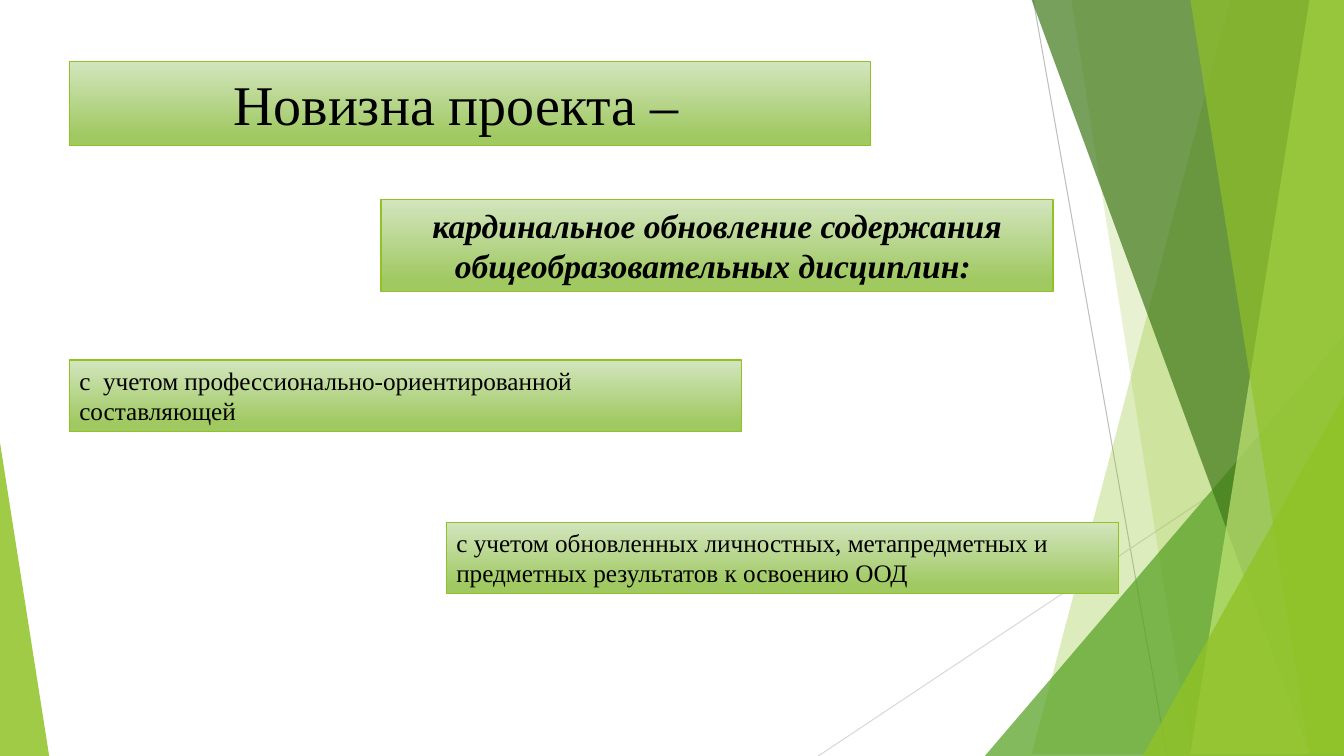
from lxml import etree
from pptx import Presentation
from pptx.dml.color import RGBColor
from pptx.enum.shapes import MSO_CONNECTOR, MSO_SHAPE
from pptx.enum.text import MSO_ANCHOR, MSO_AUTO_SIZE, PP_ALIGN
from pptx.oxml.ns import qn
from pptx.util import Cm, Pt

STRAIGHT = MSO_CONNECTOR.STRAIGHT
TRIANGLE = MSO_SHAPE.ISOSCELES_TRIANGLE
CENTER, LEFT = PP_ALIGN.CENTER, PP_ALIGN.LEFT
TOP, MIDDLE = MSO_ANCHOR.TOP, MSO_ANCHOR.MIDDLE
FIT_SHAPE = MSO_AUTO_SIZE.SHAPE_TO_FIT_TEXT

COLORS = {
    "lime": "90C226",
    "pale lime": "C0E474",
    "green": "54A021",
    "dark green": "3F7819",
    "gray": "BFBFBF",
    "light gray": "D9D9D9",
    "gradient top": "D3E5BE",
    "gradient bottom": "A0C962",
    "text": "000000",
}
FONT = "Times New Roman"
WIDTH, HEIGHT = 33.87, 19.05


def color(name):
    return RGBColor.from_string(COLORS[name])


def paint_facet(shape, name, opacity):
    shape.shadow.inherit = False
    shape.line.fill.background()
    shape.fill.solid()
    shape.fill.fore_color.rgb = color(name)
    tint = shape.fill._xPr.find(qn("a:solidFill"))[0]
    etree.SubElement(tint, qn("a:alpha"), val=str(opacity * 1000))


deck = Presentation()
deck.slide_width, deck.slide_height = Cm(WIDTH), Cm(HEIGHT)
page = deck.slides.add_slide(deck.slide_layouts[5])

thin_lines = [
    (26.04, 0, 29.41, HEIGHT, "gray"),
    (WIDTH, 10.24, 20.62, HEIGHT, "light gray"),
]
for start_x, start_y, end_x, end_y, name in thin_lines:
    line = page.shapes.add_connector(
        STRAIGHT, Cm(start_x), Cm(start_y), Cm(end_x), Cm(end_y))
    line.line.color.rgb = color(name)
    line.line.width = Pt(0.75)
    etree.SubElement(line._element.spPr, qn("a:effectLst"))

facets = [
    ("band", (31.19, 25.5), "lime", 30),
    ("band", (26.67, 30.05), "lime", 20),
    ("triangle", (24.82, 8.46, 9.05, 1), "green", 72),
    ("band", (25.93, 32.79), "dark green", 70),
    ("band", (33.1, 30.28), "pale lime", 70),
    ("band", (30.38, 33.48), "lime", 65),
    ("triangle", (28.8, 9.98, 5.07, 1), "lime", 80),
    ("triangle", (0, 11.15, 1.24, 0), "lime", 85),
]
for kind, place, name, opacity in facets:
    if kind == "band":
        top_x, bottom_x = place
        outline = page.shapes.build_freeform(top_x, 0, scale=Cm(1))
        outline.add_line_segments(
            [(WIDTH, 0), (WIDTH, HEIGHT), (bottom_x, HEIGHT)], close=True)
        facet = outline.convert_to_shape()
    else:
        left, top, width, apex = place
        facet = page.shapes.add_shape(
            TRIANGLE, Cm(left), Cm(top), Cm(width), Cm(HEIGHT - top))
        facet.adjustments[0] = apex
    paint_facet(facet, name, opacity)

title = page.shapes.title
panels = [
    (title, (1.75, 1.63, 20.19, 1.96), "Новизна проекта –", 40, CENTER),
    (None, (9.6, 5.03, 16.94, 2.31),
     "кардинальное обновление содержания общеобразовательных дисциплин: ",
     24, CENTER),
    (None, (1.75, 9.07, 16.94, 1.8),
     "с  учетом профессионально-ориентированной составляющей", 18, LEFT),
    (None, (11.25, 13.16, 16.94, 1.8),
     "с учетом обновленных личностных, метапредметных и предметных "
     "результатов к освоению ООД", 18, LEFT),
]
for holder, place, text, size, alignment in panels:
    left, top, width, height = map(Cm, place)
    box = holder or page.shapes.add_textbox(left, top, width, height)
    box.left, box.top, box.width, box.height = left, top, width, height
    box.fill.gradient()
    box.fill.gradient_angle = 270
    stops = zip(box.fill.gradient_stops, (0, 0.88),
                ("gradient top", "gradient bottom"))
    for stop, position, name in stops:
        stop.position = position
        stop.color.rgb = color(name)
    box.line.color.rgb = color("lime")
    box.line.width = Pt(1)
    frame = box.text_frame
    frame.word_wrap = True
    frame.auto_size = FIT_SHAPE
    frame.vertical_anchor = MIDDLE if holder else TOP
    frame.text = text
    para = frame.paragraphs[0]
    para.alignment = alignment
    para.font.name = FONT
    para.font.size = Pt(size)
    para.font.color.rgb = color("text")
    para.font.bold = para.font.italic = size == 24

title.text_frame.margin_right = Cm(0.96)

deck.save("out.pptx")
